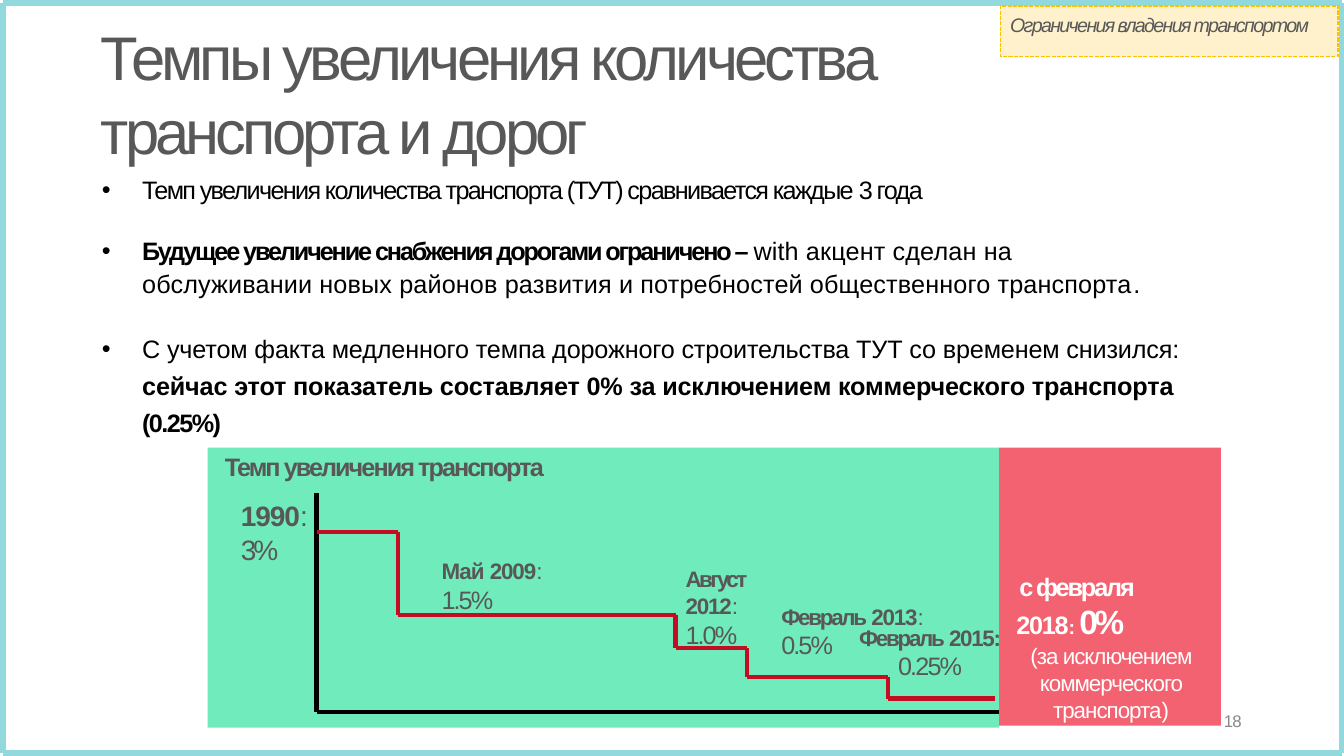
from dataclasses import dataclass
from typing import Optional

from lxml.etree import SubElement
from pptx import Presentation
from pptx.dml.color import RGBColor
from pptx.enum.dml import MSO_LINE
from pptx.enum.shapes import MSO_CONNECTOR, MSO_SHAPE
from pptx.enum.text import MSO_ANCHOR, MSO_AUTO_SIZE, PP_ALIGN
from pptx.oxml.ns import qn
from pptx.util import Inches, Pt

COLORS = {
    "gray": "585858", "black": "000000", "white": "FFFFFF", "number": "888888",
    "mint": "70EBBC", "coral": "F36270", "red": "C40D23", "frame": "92D9DE",
    "cream": "FFF1CC", "gold": "FFC000",
}
Point = tuple[float, float]
Box = tuple[float, float, float, float]


@dataclass
class Span:
    text: str
    size: float
    tracking: float = 0
    bold: bool = False
    italic: bool = False


@dataclass
class Para:
    spans: list[Span]
    before: float = 0
    leading: Optional[float] = None
    align: PP_ALIGN = PP_ALIGN.LEFT
    margin: float = 0
    indent: float = 0


@dataclass
class StepLabel:
    box: Box
    paras: list[Para]


def color(name: str) -> RGBColor:
    return RGBColor.from_string(COLORS[name])


def write(frame, paras: list[Para], ink: str, anchor=MSO_ANCHOR.TOP,
          left: float = 0, top: float = 0.02, bottom: float = 0) -> None:
    frame.word_wrap = True
    frame.auto_size = MSO_AUTO_SIZE.NONE
    frame.vertical_anchor = anchor
    frame.margin_left, frame.margin_top = Inches(left), Inches(top)
    frame.margin_right, frame.margin_bottom = 0, Inches(bottom)
    for index, para in enumerate(paras):
        paragraph = frame.add_paragraph() if index else frame.paragraphs[0]
        paragraph.alignment = para.align
        paragraph.space_before = Pt(para.before)
        if para.leading:
            paragraph.line_spacing = Pt(para.leading)
        properties = paragraph._p.get_or_add_pPr()
        properties.set("marL", str(Inches(para.margin)))
        properties.set("indent", str(Inches(para.indent)))
        for span in para.spans:
            run = paragraph.add_run()
            run.text = span.text
            font = run.font
            font.name, font.size = "Arial", Pt(span.size)
            font.bold, font.italic = span.bold, span.italic
            font.color.rgb = color(ink)
            run._r.get_or_add_rPr().set("spc", str(round(span.tracking * 100)))


def place(shape, box: Box) -> None:
    shape.left, shape.top, shape.width, shape.height = map(Inches, box)


def add_text(slide, box: Box, paras: list[Para], ink: str = "gray") -> None:
    write(slide.shapes.add_textbox(*map(Inches, box)).text_frame, paras, ink)


def add_panel(slide, box: Box, fill: str):
    panel = slide.shapes.add_shape(MSO_SHAPE.RECTANGLE, *map(Inches, box))
    panel.shadow.inherit = False
    panel.fill.solid()
    panel.fill.fore_color.rgb = color(fill)
    panel.line.fill.background()
    return panel


def add_line(slide, start: Point, end: Point, ink: str, width: float) -> None:
    line = slide.shapes.add_connector(MSO_CONNECTOR.STRAIGHT, *map(Inches, start + end))
    line.line.color.rgb = color(ink)
    line.line.width = Pt(width)
    SubElement(line._element.spPr, qn("a:effectLst"))


def add_path(slide, points: list[Point], ink: str, width: float) -> None:
    for start, end in zip(points, points[1:]):
        add_line(slide, start, end, ink, width)


def rate_label(box: Box, month: str, year: str, rate: str, tracking: float) -> StepLabel:
    return StepLabel(box, [
        Para([Span(month, 16, tracking, True), Span(year, 16, -0.8, True), Span(":", 16, -0.8)],
             leading=19.1),
        Para([Span(rate, 18, -1.4)], leading=21.5),
    ])


BULLETS = [
    Para([Span("Темп увеличения количества транспорта (ТУТ) сравнивается каждые ", 18, -1.2),
          Span("3 года", 18, -1.1)], margin=0.41, indent=-0.4),
    Para([Span("Будущее увеличение снабжения дорогами ограничено – ", 18, -1.5, True),
          Span("with акцент сделан на обслуживании новых районов развития и потребностей "
               "общественного транспорта", 18, 0.1),
          Span(".", 18, -1.2)], 20, 23.4, margin=0.41, indent=-0.4),
    Para([Span("С учетом факта медленного темпа дорожного строительства ТУТ со временем "
               "снизился: ", 18, -0.1),
          Span("сейчас этот показатель составляет 0% за исключением коммерческого "
               "транспорта ", 18, -0.1, True),
          Span("(0.25%)", 18, -1.1, True)], 20.2, 26.5, margin=0.41, indent=-0.4),
]
STEP_LABELS = [
    StepLabel((4.38, 5.51, 1.53, 0.33), [
        Para([Span("Май ", 16, -0.7, True), Span("2009", 16, -0.8, True),
              Span(": ", 16, -0.8), Span("1.5%", 18, -1.4)])]),
    rate_label((6.8, 5.59, 1.14, 0.59), "Август ", "2012", "1.0%", -1.8),
    StepLabel((2.23, 4.46, 3.52, 1.16), [
        Para([Span("Темп увеличения транспорта", 18, -1.4, True)]),
        Para([Span("1990", 20, -0.8, True), Span(":", 20, -0.8)], 12, margin=0.16),
        Para([Span("3%", 20, -2.2)], margin=0.16)]),
    rate_label((7.75, 5.96, 1.6, 0.59), "Февраль ", "2013", "0.5%", -1.6),
    StepLabel((8.5, 6.17, 1.45, 0.59), [
        Para([Span("Февраль ", 16, -1.6, True), Span("2015:", 16, -0.9, True)],
             leading=19.1, align=PP_ALIGN.CENTER),
        Para([Span("0.25%", 18, -1.3)], leading=21.5, align=PP_ALIGN.CENTER)]),
]
CURRENT_RATE = [
    Para([Span("с февраля", 18, -1.5, True)], leading=21.4, margin=0.2),
    Para([Span("2018", 18, -0.9, True), Span(": ", 14, -0.9, True),
          Span("0%", 24, -2.6, True)], leading=28.6, margin=0.17),
    Para([Span("(за исключением коммерческого транспорта", 16, -0.7), Span(")", 16, -0.8)],
         0.6, align=PP_ALIGN.CENTER, margin=0.02),
]
AXES = [(3.14, 4.89), (3.14, 7.06), (9.92, 7.06)]
# Each step: level of the rate line and where it ends
STEPS = [(5.28, 3.95), (6.1, 6.7), (6.43, 7.41), (6.72, 8.81), (6.93, 9.87)]
FRAME = [(0.03, 0.03), (13.31, 0.03), (13.31, 7.47), (0.03, 7.47), (0.03, 0.03)]


def add_growth_chart(slide) -> None:
    add_panel(slide, (2.06, 4.44, 7.85, 2.78), "mint")
    add_path(slide, AXES, "black", 3)
    corners, step_start = [], AXES[0][0]
    for level, step_end in STEPS:
        corners += [(step_start, level), (step_end, level)]
        step_start = step_end
    add_path(slide, corners, "red", 3)
    for label in STEP_LABELS:
        add_text(slide, label.box, label.paras)
    current = add_panel(slide, (9.91, 4.44, 2.2, 2.76), "coral")
    write(current.text_frame, CURRENT_RATE, "white", MSO_ANCHOR.BOTTOM, bottom=0.03)


def main() -> None:
    deck = Presentation()
    deck.slide_width, deck.slide_height = Inches(13.33), Inches(7.5)
    slide = deck.slides.add_slide(deck.slide_layouts[1])
    heading, points = slide.placeholders
    place(heading, (0.98, 0.17, 7.91, 1.5))
    write(heading.text_frame, [Para([Span("Темпы увеличения количества транспорта и дорог",
                                          44, -2.8)], margin=0.02)], "gray")
    place(points, (1, 1.71, 10.8, 2.66))
    write(points.text_frame, BULLETS, "black")
    add_text(slide, (12.13, 7.03, 0.2, 0.23),
             [Para([Span("18", 12, -0.6)], margin=0.01)], "number")
    add_growth_chart(slide)
    add_path(slide, FRAME, "frame", 3.8)
    topic = add_panel(slide, (9.92, 0.06, 3.35, 0.5), "cream")
    topic.line.color.rgb = color("gold")
    topic.line.width = Pt(0.96)
    topic.line.dash_style = MSO_LINE.SQUARE_DOT
    write(topic.text_frame, [Para([Span("Ограничения владения транспортом", 14, -1.2,
                                        italic=True)])], "gray", left=0.1, top=0.07)
    deck.save("out.pptx")


if __name__ == "__main__":
    main()
